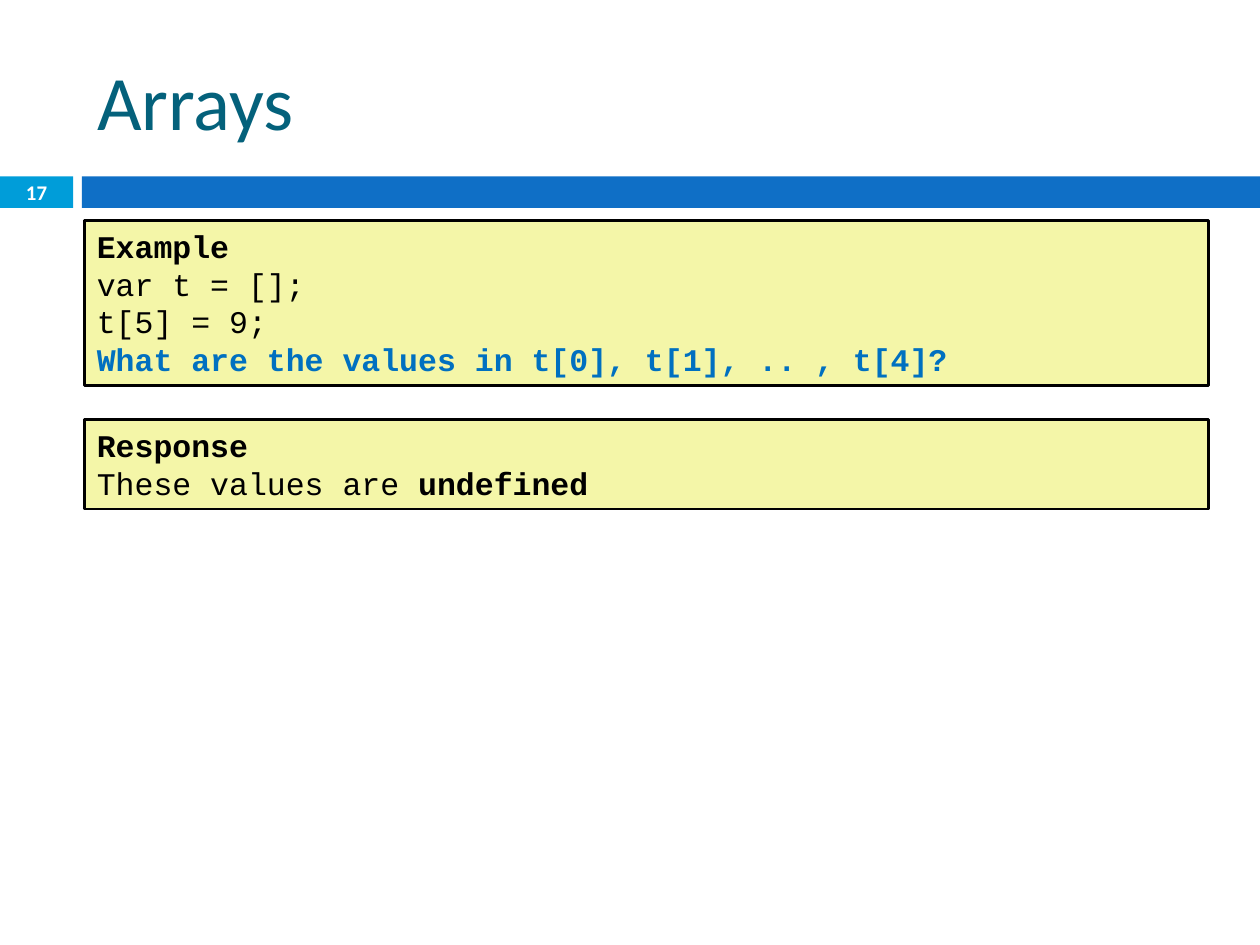
from dataclasses import dataclass

from pptx import Presentation
from pptx import util as u
from pptx.dml.color import RGBColor
from pptx.enum import shapes, text


@dataclass(frozen=True)
class Theme:
    sky: str = "009DD9"
    blue: str = "0F6FC6"
    teal: str = "04617B"
    cream: str = "F4F6A8"
    ask: str = "0070C0"
    black: str = "000000"
    white: str = "FFFFFF"
    head: float = 44
    code: float = 18
    page: float = 11.9
    sans: str = "Calibri"
    mono: str = "Courier New"


theme = Theme()


def write(para, words, font=theme.mono, size=theme.code, color=theme.black,
          bold=False, align=text.PP_ALIGN.LEFT):
    para.alignment = align
    run = para.add_run()
    run.text = words
    run.font.name = font
    run.font.size = u.Pt(size)
    run.font.bold = bold
    run.font.color.rgb = RGBColor.from_string(color)


def add_box(left, top, width, height, fill, line=None):
    box = slide.shapes.add_shape(
        shapes.MSO_SHAPE.RECTANGLE, u.Inches(left), u.Inches(top),
        u.Inches(width), u.Inches(height))
    box.shadow.inherit = False
    box.fill.solid()
    box.fill.fore_color.rgb = RGBColor.from_string(fill)
    if line:
        box.line.color.rgb = RGBColor.from_string(line)
        box.line.width = u.Pt(1.5)
    else:
        box.line.fill.background()
    return box


deck = Presentation()
deck.slide_width, deck.slide_height = u.Inches(10), u.Inches(7.5)
slide = deck.slides.add_slide(deck.slide_layouts[5])
left, width = 0.67, 8.92

# Band under the title
add_box(0, 1.4, 0.58, 0.25, theme.sky)
add_box(0.65, 1.4, 9.35, 0.25, theme.blue)

# Title
title = slide.shapes.title
title.left, title.top = u.Inches(left), u.Inches(0.25)
title.width, title.height = u.Inches(width), u.Inches(1.08)
title.text_frame.vertical_anchor = text.MSO_ANCHOR.MIDDLE
write(title.text_frame.paragraphs[0], "Arrays", font=theme.sans,
      size=theme.head, color=theme.teal)

# Page number
page = slide.shapes.add_textbox(
    u.Inches(0), u.Inches(1.39), u.Inches(0.58), u.Inches(0.27)).text_frame
page.word_wrap = True
page.margin_top = page.margin_bottom = 0
page.vertical_anchor = text.MSO_ANCHOR.MIDDLE
write(page.paragraphs[0], "17", font=theme.sans, size=theme.page,
      color=theme.white, bold=True, align=text.PP_ALIGN.CENTER)

# Code panels: top, height, then lines of (words, format) runs
strong = {"bold": True}
panels = [
    (1.75, 1.31, [
        [("Example", strong)],
        [("var t = [];", {})],
        [("t[5] = 9;", {})],
        [("What are the values in t[0], t[1], .. , t[4]?",
          {"bold": True, "color": theme.ask})],
    ]),
    (3.33, 0.71, [
        [("Response", strong)],
        [("These values are ", {}), ("undefined", strong)],
    ]),
]
for top, height, lines in panels:
    frame = add_box(left, top, width, height, theme.cream, theme.black).text_frame
    frame.word_wrap = True
    frame.auto_size = text.MSO_AUTO_SIZE.SHAPE_TO_FIT_TEXT
    frame.vertical_anchor = text.MSO_ANCHOR.TOP
    for row, runs in enumerate(lines):
        para = frame.add_paragraph() if row else frame.paragraphs[0]
        for words, style in runs:
            write(para, words, **style)

deck.save("out.pptx")
